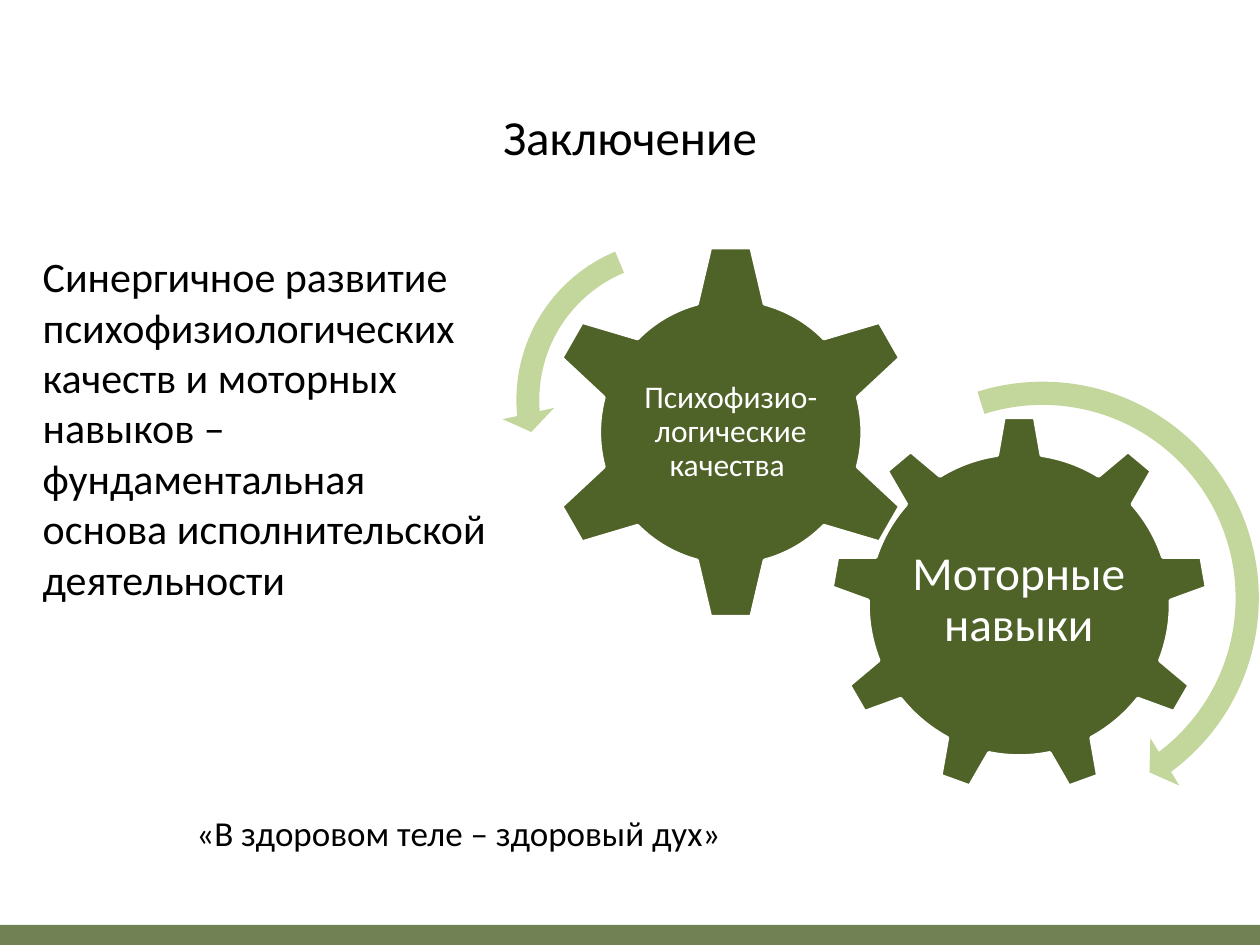
from dataclasses import dataclass
from typing import Optional

from lxml.etree import SubElement
from pptx import Presentation
from pptx.dml.color import RGBColor
from pptx.enum.shapes import MSO_SHAPE
from pptx.enum.text import MSO_ANCHOR, MSO_AUTO_SIZE, PP_ALIGN
from pptx.oxml.ns import qn
from pptx.util import Inches, Pt

BLACK = RGBColor(0x00, 0x00, 0x00)
WHITE = RGBColor(0xFF, 0xFF, 0xFF)
DARK_GREEN = RGBColor(0x4F, 0x62, 0x28)
LIGHT_GREEN = RGBColor(0xC3, 0xD6, 0x9B)
FONT = "Calibri"


@dataclass(frozen=True)
class Box:
    left: float
    top: float
    width: float
    height: float

    def lengths(self) -> list:
        return [Inches(v) for v in (self.left, self.top, self.width, self.height)]


@dataclass(frozen=True)
class Gear:
    preset: MSO_SHAPE
    box: Box
    label: str
    label_box: Box
    label_size: int
    inset: float


@dataclass(frozen=True)
class TurnArrow:
    preset: MSO_SHAPE
    box: Box
    adjustments: tuple


GEARS = (
    Gear(MSO_SHAPE.GEAR_9, Box(6.59, 3.3, 3, 3), "Моторные навыки",
         Box(7.19, 4, 1.79, 1.54), 27, 0.04),
    Gear(MSO_SHAPE.GEAR_6, Box(4.31, 1.93, 2.98, 3), "Психофизио-логические качества ",
         Box(5.06, 2.69, 1.48, 1.48), 18, 0.03),
)
# Adjustments: band width, head angle, end angle, start angle, head width
TURN_ARROWS = (
    TurnArrow(MSO_SHAPE.CIRCULAR_ARROW, Box(6.43, 2.9, 3.69, 3.69),
              (0.05, 3.13, 31.98, 151.48, 0.06)),
    TurnArrow(MSO_SHAPE.LEFT_CIRCULAR_ARROW, Box(3.98, 1.78, 2.79, 2.79),
              (0.065, 4.3, 104.89, 148.38, 0.075)),
)


def add_filled(slide, preset: MSO_SHAPE, box: Box, color: RGBColor,
               outline: Optional[RGBColor] = None):
    shape = slide.shapes.add_shape(preset, *box.lengths())
    shape.shadow.inherit = False
    shape.fill.solid()
    shape.fill.fore_color.rgb = color
    if outline is None:
        shape.line.fill.background()
    else:
        shape.line.color.rgb = outline
        shape.line.width = Pt(2)
    return shape


def add_text(slide, box: Box, *paragraphs: str, size: int, color: RGBColor = BLACK,
             align: PP_ALIGN = PP_ALIGN.LEFT, anchor: MSO_ANCHOR = MSO_ANCHOR.TOP,
             inset: Optional[float] = None, line_spacing: float = 1.0,
             grow: bool = True) -> None:
    frame = slide.shapes.add_textbox(*box.lengths()).text_frame
    frame.word_wrap = True
    frame.auto_size = MSO_AUTO_SIZE.SHAPE_TO_FIT_TEXT if grow else MSO_AUTO_SIZE.NONE
    frame.vertical_anchor = anchor
    if inset is not None:
        frame.margin_left = frame.margin_right = Inches(inset)
        frame.margin_top = frame.margin_bottom = Inches(inset)
    frame.text = "\n".join(paragraphs)
    for paragraph in frame.paragraphs:
        paragraph.alignment = align
        paragraph.line_spacing = line_spacing
        for run in paragraph.runs:
            run.font.name = FONT
            run.font.size = Pt(size)
            run.font.color.rgb = color


def add_gear(slide, gear: Gear) -> None:
    add_filled(slide, gear.preset, gear.box, DARK_GREEN, outline=WHITE)
    add_text(slide, gear.label_box, gear.label, size=gear.label_size, color=WHITE,
             align=PP_ALIGN.CENTER, anchor=MSO_ANCHOR.MIDDLE, inset=gear.inset,
             line_spacing=0.9, grow=False)


def add_turn_arrow(slide, arrow: TurnArrow) -> None:
    shape = add_filled(slide, arrow.preset, arrow.box, LIGHT_GREEN)
    for index, value in enumerate(arrow.adjustments):
        shape.adjustments[index] = value


def main() -> None:
    prs = Presentation()
    prs.slide_width, prs.slide_height = Inches(10), Inches(7.5)
    slide = prs.slides.add_slide(prs.slide_layouts[6])

    # Translucent footer band
    band = add_filled(slide, MSO_SHAPE.RECTANGLE, Box(-0.12, 7.34, 10.24, 0.16), DARK_GREEN)
    band_color = band.fill._xPr.find(qn("a:solidFill"))[0]
    SubElement(band_color, qn("a:alpha")).set("val", "80000")

    # Title
    add_text(slide, Box(0, 0.8, 10, 0.57), "Заключение", size=28, align=PP_ALIGN.CENTER)

    # Meshing gears and their direction of turn
    for gear in GEARS:
        add_gear(slide, gear)
    for arrow in TURN_ARROWS:
        add_turn_arrow(slide, arrow)

    # Conclusion and closing motto
    add_text(slide, Box(0.24, 1.94, 3.82, 2.93),
             "Синергичное развитие психофизиологических качеств и моторных",
             "навыков –",
             "фундаментальная основа исполнительской деятельности", size=24)
    add_text(slide, Box(1.46, 6.39, 5.98, 0.44), "«В здоровом теле – здоровый дух»", size=20)

    prs.save("out.pptx")


if __name__ == "__main__":
    main()
